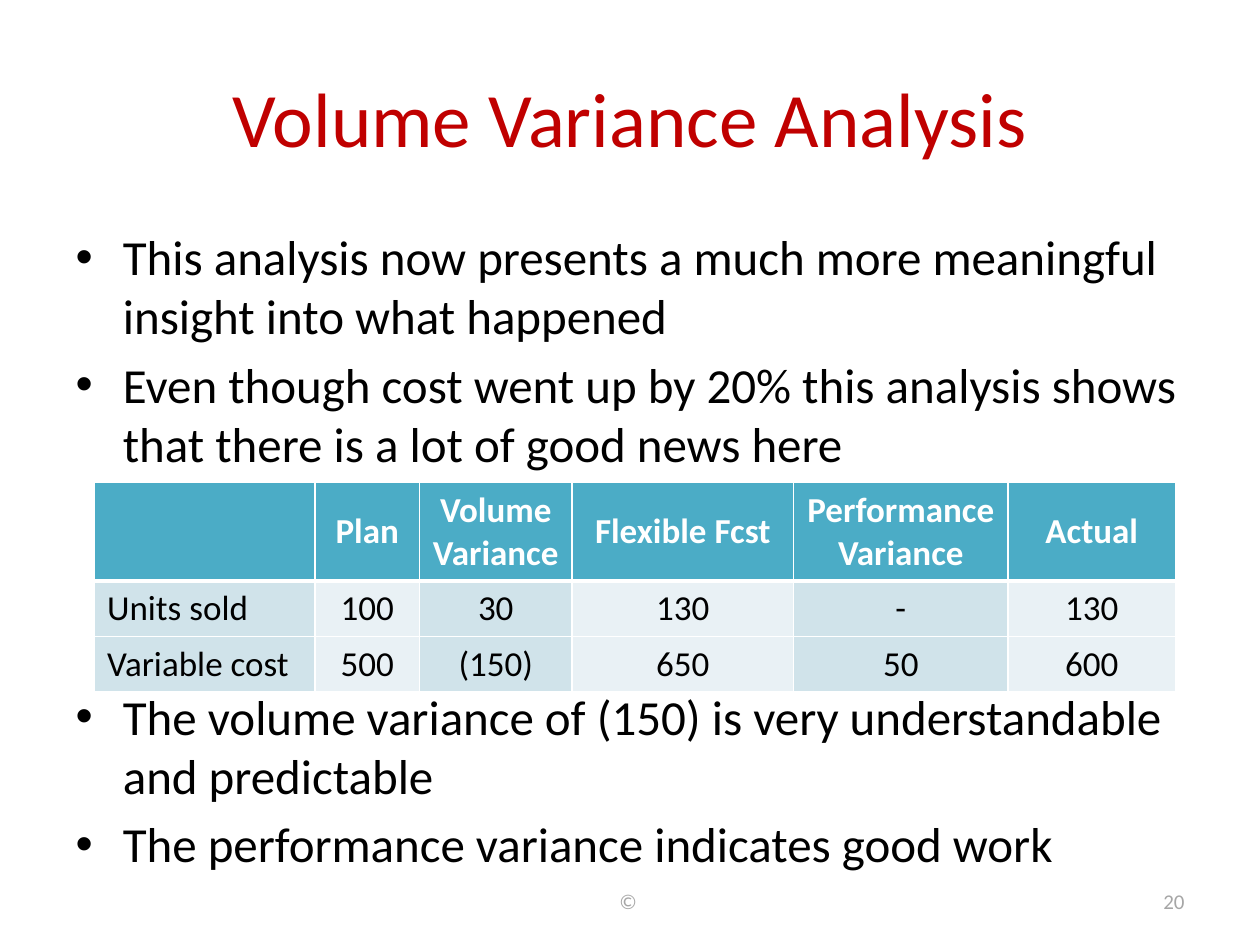
from dataclasses import dataclass

from lxml.etree import SubElement
from pptx import Presentation
from pptx.dml.color import RGBColor
from pptx.enum.text import MSO_ANCHOR, MSO_AUTO_SIZE, PP_ALIGN
from pptx.oxml.ns import qn
from pptx.util import Inches, Pt


@dataclass(frozen=True)
class Theme:
    font: str = "Calibri"
    title: str = "C00000"
    ink: str = "000000"
    white: str = "FFFFFF"
    muted: str = "A6A6A6"
    header: str = "4BACC6"
    bands: tuple = ("D0E3EA", "E9F1F5")
    title_size: int = 44
    body_size: int = 28
    table_size: int = 20
    footer_size: int = 12


@dataclass(frozen=True)
class Column:
    heading: str
    width: float
    values: tuple


@dataclass(frozen=True)
class Footer:
    text: str
    left: float
    width: float
    align: PP_ALIGN


THEME = Theme()
BULLETS = (
    "This analysis now presents a much more meaningful insight into what happened",
    "Even though cost went up by 20% this analysis shows that there is a lot of good news here",
    "The volume variance of (150) is very understandable and predictable",
    "The performance variance indicates good work",
)
FIRST_BULLET_BELOW_TABLE = 2
COLUMNS = (
    Column("", 1.75, ("Units sold", "Variable cost")),
    Column("Plan", 0.83, ("100", "500")),
    Column("Volume Variance", 1.21, ("30", "(150)")),
    Column("Flexible Fcst", 1.76, ("130", "650")),
    Column("Performance Variance", 1.7, ("-", "50")),
    Column("Actual", 1.33, ("130", "600")),
)
ROW_HEIGHTS = (0.75, 0.44, 0.44)
FOOTERS = (
    Footer("© ", 3.42, 3.17, PP_ALIGN.CENTER),
    Footer("20", 7.17, 2.33, PP_ALIGN.RIGHT),
)


def place(shape, left: float, top: float, width: float, height: float) -> None:
    box = {"left": left, "top": top, "width": width, "height": height}
    for name, value in box.items():
        setattr(shape, name, Inches(value))


def write(para, text: str, size: int, color: str, bold: bool = False) -> None:
    span = para.add_run()
    span.text = text
    formats = {"name": THEME.font, "size": Pt(size), "bold": bold}
    for name, value in formats.items():
        setattr(span.font, name, value)
    span.font.color.rgb = RGBColor.from_string(color)


def set_borders(cell, top: float, bottom: float) -> None:
    """Give the cell white borders; widths are in points."""
    properties = cell._tc.get_or_add_tcPr()
    widths = {"a:lnL": 1, "a:lnR": 1, "a:lnT": top, "a:lnB": bottom}
    for index, (tag, width) in enumerate(widths.items()):
        line = SubElement(properties, qn(tag), w=str(Pt(width)))
        fill = SubElement(line, qn("a:solidFill"))
        SubElement(fill, qn("a:srgbClr"), val=THEME.white)
        properties.insert(index, line)


def add_title(page) -> None:
    title = page.shapes.title
    place(title, 0.5, 0.3, 9, 1.25)
    frame = title.text_frame
    frame.vertical_anchor = MSO_ANCHOR.MIDDLE
    frame.paragraphs[0].alignment = PP_ALIGN.CENTER
    write(frame.paragraphs[0], "Volume Variance Analysis", THEME.title_size, THEME.title)


def add_bullets(page) -> None:
    body = page.placeholders[1]
    place(body, 0.5, 1.75, 9, 4.95)
    frame = body.text_frame
    frame.auto_size = MSO_AUTO_SIZE.NONE
    for index, text in enumerate(BULLETS):
        para = frame.paragraphs[0] if index == 0 else frame.add_paragraph()
        write(para, text, THEME.body_size, THEME.ink)
        if index == FIRST_BULLET_BELOW_TABLE:
            para.space_before = Pt(122.5)


def add_variance_table(page) -> None:
    frame = page.shapes.add_table(
        len(ROW_HEIGHTS), len(COLUMNS), Inches(0.75), Inches(3.83),
        Inches(sum(column.width for column in COLUMNS)), Inches(sum(ROW_HEIGHTS)))
    table = frame.table
    for row, height in zip(table.rows, ROW_HEIGHTS):
        row.height = Inches(height)
    for c, column in enumerate(COLUMNS):
        table.columns[c].width = Inches(column.width)
        for r, text in enumerate((column.heading, *column.values)):
            cell = table.cell(r, c)
            is_header = r == 0
            fill = THEME.header if is_header else THEME.bands[c % 2]
            cell.fill.solid()
            cell.fill.fore_color.rgb = RGBColor.from_string(fill)
            set_borders(cell, top=3 if r == 1 else 1, bottom=3 if is_header else 1)
            cell.vertical_anchor = MSO_ANCHOR.MIDDLE if is_header else MSO_ANCHOR.TOP
            para = cell.text_frame.paragraphs[0]
            para.alignment = PP_ALIGN.LEFT if c == 0 else PP_ALIGN.CENTER
            if text:
                color = THEME.white if is_header else THEME.ink
                write(para, text, THEME.table_size, color, bold=is_header)


def add_footer(page, footer: Footer) -> None:
    box = page.shapes.add_textbox(
        Inches(footer.left), Inches(6.95), Inches(footer.width), Inches(0.4))
    frame = box.text_frame
    frame.word_wrap = True
    frame.vertical_anchor = MSO_ANCHOR.MIDDLE
    frame.paragraphs[0].alignment = footer.align
    write(frame.paragraphs[0], footer.text, THEME.footer_size, THEME.muted)


def main() -> None:
    deck = Presentation()
    deck.slide_width, deck.slide_height = Inches(10), Inches(7.5)
    page = deck.slides.add_slide(deck.slide_layouts[1])
    add_title(page)
    add_bullets(page)
    add_variance_table(page)
    for footer in FOOTERS:
        add_footer(page, footer)
    deck.save("out.pptx")


if __name__ == "__main__":
    main()
